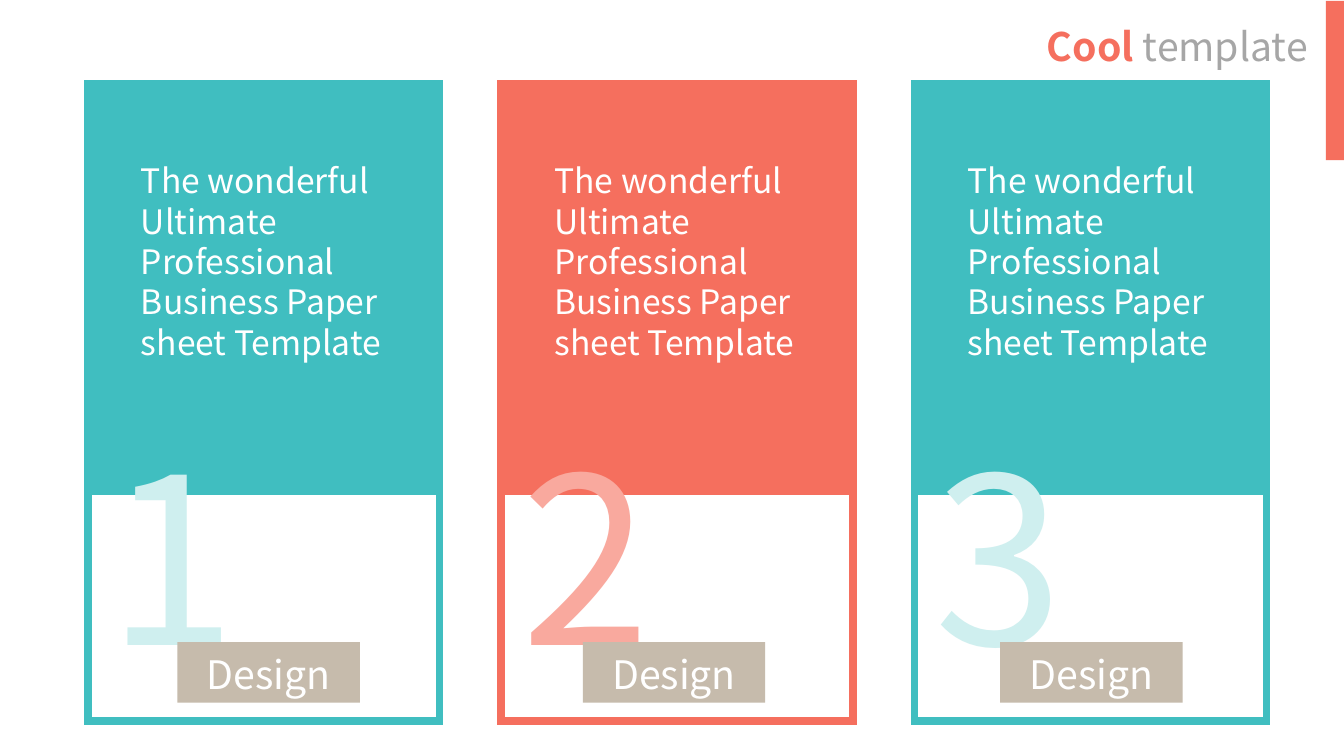
from dataclasses import dataclass

from lxml.etree import SubElement
from pptx import Presentation
from pptx.dml.color import RGBColor
from pptx.enum.shapes import MSO_SHAPE
from pptx.enum.text import MSO_ANCHOR, MSO_AUTO_SIZE, PP_ALIGN
from pptx.oxml.ns import qn
from pptx.util import Inches, Pt


@dataclass(frozen=True)
class Theme:
    font: str = "Noto Sans CJK JP"
    teal: str = "40BEC0"
    pale_teal: str = "CFEFEF"
    coral: str = "F56F5E"
    pale_coral: str = "F9A99E"
    taupe: str = "C6BBAC"
    grey: str = "A6A6A6"
    white: str = "FFFFFF"
    heading_size: int = 28
    body_size: int = 24
    number_size: int = 166
    border: float = 5.5


THEME = Theme()
MESSAGE = "The wonderful Ultimate Professional Business Paper sheet Template"
CARD_LEFT, CARD_TOP, CARD_PITCH = 0.87, 0.83, 4.1
CARD_WIDTH, PANEL_HEIGHT = 3.49, 4.02
# number, main colour, number colour, tag offset from the card's left edge
CARDS = [
    ("1", THEME.teal, THEME.pale_teal, 0.89),
    ("2", THEME.coral, THEME.pale_coral, 0.81),
    ("3", THEME.teal, THEME.pale_teal, 0.85),
]


def style_run(run, size, color, bold=False):
    run.font.name = THEME.font
    run.font.size = Pt(size)
    run.font.bold = bold
    run.font.color.rgb = RGBColor.from_string(color)


def add_block(slide, left, top, width, height, fill, border=None):
    """Add a rectangle; a border, if given, has square corners."""
    block = slide.shapes.add_shape(
        MSO_SHAPE.RECTANGLE, Inches(left), Inches(top), Inches(width), Inches(height))
    block.shadow.inherit = False
    block.fill.solid()
    block.fill.fore_color.rgb = RGBColor.from_string(fill)
    if border:
        block.line.color.rgb = RGBColor.from_string(border)
        block.line.width = Pt(THEME.border)
        outline = block.element.spPr.find(qn("a:ln"))
        SubElement(outline, qn("a:miter"), lim="800000")
    else:
        block.line.fill.background()
    return block


def fill_text(shape, text, size, color, wrap=True):
    frame = shape.text_frame
    frame.text = text
    frame.word_wrap = wrap
    frame.auto_size = MSO_AUTO_SIZE.SHAPE_TO_FIT_TEXT
    style_run(frame.paragraphs[0].runs[0], size, color)


def add_label(slide, left, top, width, height, text, size, color, wrap=True):
    label = slide.shapes.add_textbox(
        Inches(left), Inches(top), Inches(width), Inches(height))
    fill_text(label, text, size, color, wrap)


def add_tag(slide, left, top):
    tag = add_block(slide, left, top, 1.81, 0.6, THEME.taupe)
    fill_text(tag, "Design", THEME.heading_size, THEME.white)
    tag.text_frame.margin_top = Inches(0.08)
    tag.text_frame.paragraphs[0].alignment = PP_ALIGN.CENTER


def add_card(slide, left, top, number, color, number_color, tag_offset):
    add_block(slide, left, top, CARD_WIDTH, PANEL_HEIGHT, color, color)
    add_block(slide, left, top + 4.04, CARD_WIDTH, 2.28, THEME.white, color)
    add_label(slide, left + 0.1, top + 3.22, 1.65, 2.89,
              number, THEME.number_size, number_color, wrap=False)
    add_tag(slide, left + tag_offset, top + 5.54)
    add_label(slide, left + 0.43, top + 0.71, 2.64, 2.52,
              MESSAGE, THEME.body_size, THEME.white)


def place_title(slide, left, top, width, height):
    title = slide.shapes.title
    title.left, title.top = Inches(left), Inches(top)
    title.width, title.height = Inches(width), Inches(height)
    frame = title.text_frame
    frame.word_wrap = False
    frame.auto_size = MSO_AUTO_SIZE.SHAPE_TO_FIT_TEXT
    frame.vertical_anchor = MSO_ANCHOR.TOP
    heading = frame.paragraphs[0]
    heading.alignment = PP_ALIGN.RIGHT
    for word, color, bold in (("Cool ", THEME.coral, True),
                              ("template", THEME.grey, False)):
        run = heading.add_run()
        run.text = word
        style_run(run, THEME.heading_size, color, bold)


def main():
    deck = Presentation()
    deck.slide_width, deck.slide_height = Inches(13.33), Inches(7.5)
    slide = deck.slides.add_slide(deck.slide_layouts[5])
    for index, card in enumerate(CARDS):
        add_card(slide, CARD_LEFT + index * CARD_PITCH, CARD_TOP, *card)
    add_block(slide, 13.15, 0.01, 0.18, 1.58, THEME.coral)
    place_title(slide, 10.14, 0.17, 2.93, 0.57)
    deck.save("out.pptx")


if __name__ == "__main__":
    main()
